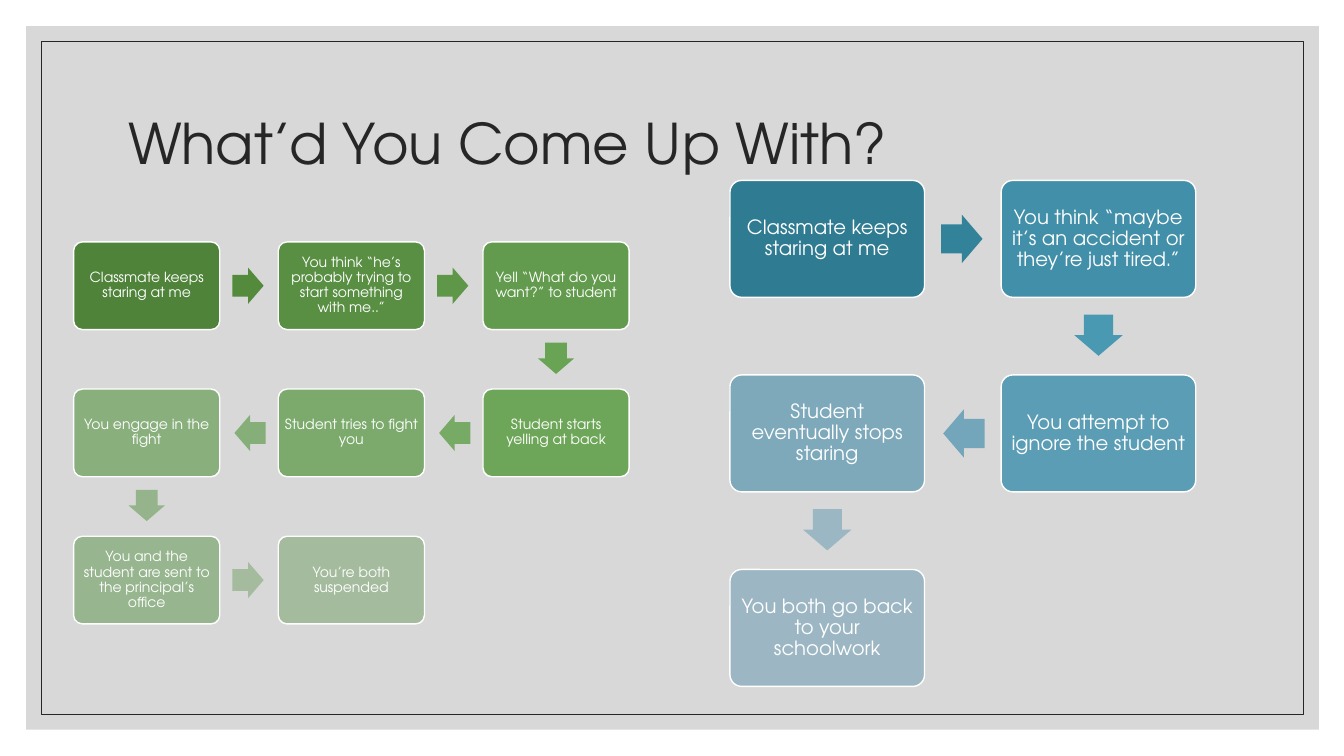
from dataclasses import dataclass

from lxml.etree import SubElement
from pptx import Presentation
from pptx.dml.color import RGBColor
from pptx.enum.shapes import MSO_SHAPE
from pptx.enum.text import MSO_ANCHOR, MSO_AUTO_SIZE, PP_ALIGN
from pptx.oxml.ns import qn
from pptx.util import Pt

PX = 9144  # EMU per px, 100 px to the inch


@dataclass(frozen=True)
class Theme:
    font: str = "TeX Gyre Adventor"
    ink: str = "262626"
    paper: str = "FFFFFF"
    panel: str = "BFBFBF"
    title_size: int = 40
    small_size: int = 10
    large_size: int = 14
    greens: tuple = ("4F8339", "598F43", "639B4E", "6EA659",
                     "7BAA6C", "89AF7D", "97B58E", "A4BB9E")
    green_arrows: tuple = ("538A3C", "5E9748", "69A354", "77AA65",
                           "86AE79", "95B48B", "A4BB9D")
    blues: tuple = ("2F7B91", "418FA8", "5B9DB5", "7DA9BB", "9CB7C3")
    blue_arrows: tuple = ("328299", "4999B3", "73A6BA", "9BB7C3")


THEME = Theme()


def add_block(shapes, kind, box, fill=None, line=None, line_width=1):
    """Add a preset shape at box (left, top, width, height in px), without shadow."""
    shape = shapes.add_shape(kind, *(int(length * PX) for length in box))
    shape.shadow.inherit = False
    if fill:
        shape.fill.solid()
        shape.fill.fore_color.rgb = RGBColor.from_string(fill)
    else:
        shape.fill.background()
    if line:
        shape.line.color.rgb = RGBColor.from_string(line)
        shape.line.width = Pt(line_width)
    else:
        shape.line.fill.background()
    return shape


def write_text(shape, text, size, color, alignment):
    frame = shape.text_frame
    frame.word_wrap = True
    frame.auto_size = MSO_AUTO_SIZE.NONE
    frame.vertical_anchor = MSO_ANCHOR.MIDDLE
    paragraph = frame.paragraphs[0]
    paragraph.alignment = alignment
    paragraph.line_spacing = 0.9
    run = paragraph.add_run()
    run.text = text
    run.font.name = THEME.font
    run.font.size = Pt(size)
    run.font.color.rgb = RGBColor.from_string(color)


presentation = Presentation()
presentation.slide_width = 1333 * PX
presentation.slide_height = 750 * PX
slide = presentation.slides.add_slide(presentation.slide_layouts[5])

# Title, in front of the panel and its frame
title = slide.shapes.title
title.left, title.top, title.width, title.height = (
    length * PX for length in (117, 70, 1100, 150))
write_text(title, "What’d You Come Up With?", THEME.title_size, THEME.ink, PP_ALIGN.LEFT)

panel = add_block(slide.shapes, MSO_SHAPE.RECTANGLE, (26, 26, 1282, 698), THEME.panel)
panel_color = panel.fill._xPr.find(qn("a:solidFill"))[0]
SubElement(panel_color, qn("a:alpha"), val="60000")
border = add_block(slide.shapes, MSO_SHAPE.RECTANGLE, (41, 41, 1252, 668),
                   line=THEME.ink, line_width=0.5)
for backdrop in (panel, border):
    title.element.addprevious(backdrop.element)

# Two flows that snake through a grid: right, down, left, down, right
flows = [
    dict(origin=(73, 240), box=(145, 87), pitch=(203, 146), arrow=(31, 36),
         columns=3, inset=4, size=THEME.small_size,
         fills=THEME.greens, arrow_fills=THEME.green_arrows,
         steps=["Classmate keeps staring at me",
                "You think “he’s probably trying to start something with me..”",
                "Yell “What do you want?” to student",
                "Student starts yelling at back",
                "Student tries to fight you",
                "You engage in the fight",
                "You and the student are sent to the principal’s office",
                "You’re both suspended"]),
    dict(origin=(724, 179), box=(193, 116), pitch=(269, 193), arrow=(41, 48),
         columns=2, inset=6, size=THEME.large_size,
         fills=THEME.blues, arrow_fills=THEME.blue_arrows,
         steps=["Classmate keeps staring at me",
                "You think “maybe it’s an accident or they’re just tired.”",
                "You attempt to ignore the student",
                "Student eventually stops staring",
                "You both go back to your schoolwork"]),
]

for flow in flows:
    group = slide.shapes.add_group_shape()
    left, top = flow["origin"]
    width, height = flow["box"]
    pitch_x, pitch_y = flow["pitch"]
    arrow_width, arrow_height = flow["arrow"]
    columns = flow["columns"]
    previous = None
    for index, text in enumerate(flow["steps"]):
        row, column = divmod(index, columns)
        if row % 2:
            column = columns - 1 - column
        x, y = left + column * pitch_x, top + row * pitch_y
        center = (x + width / 2, y + height / 2)

        if previous:
            # Midway between the two boxes, 1 px back towards the earlier one
            step_x, step_y = center[0] - previous[0], center[1] - previous[1]
            rotation = 90 if step_y else 180 if step_x < 0 else 0
            back_x = (step_x > 0) - (step_x < 0)
            back_y = int(step_y > 0)
            arrow = add_block(group.shapes, MSO_SHAPE.RIGHT_ARROW, (
                previous[0] + step_x / 2 - back_x - arrow_width / 2,
                previous[1] + step_y / 2 - back_y - arrow_height / 2,
                arrow_width, arrow_height), flow["arrow_fills"][index - 1])
            arrow.adjustments[0] = 0.6
            arrow.adjustments[1] = 0.5
            arrow.rotation = rotation

        step = add_block(group.shapes, MSO_SHAPE.ROUNDED_RECTANGLE,
                         (x, y, width, height), flow["fills"][index], THEME.paper)
        step.adjustments[0] = 0.1
        frame = step.text_frame
        frame.margin_left = frame.margin_right = flow["inset"] * PX
        frame.margin_top = frame.margin_bottom = flow["inset"] * PX
        write_text(step, text, flow["size"], THEME.paper, PP_ALIGN.CENTER)
        previous = center

presentation.save("out.pptx")
